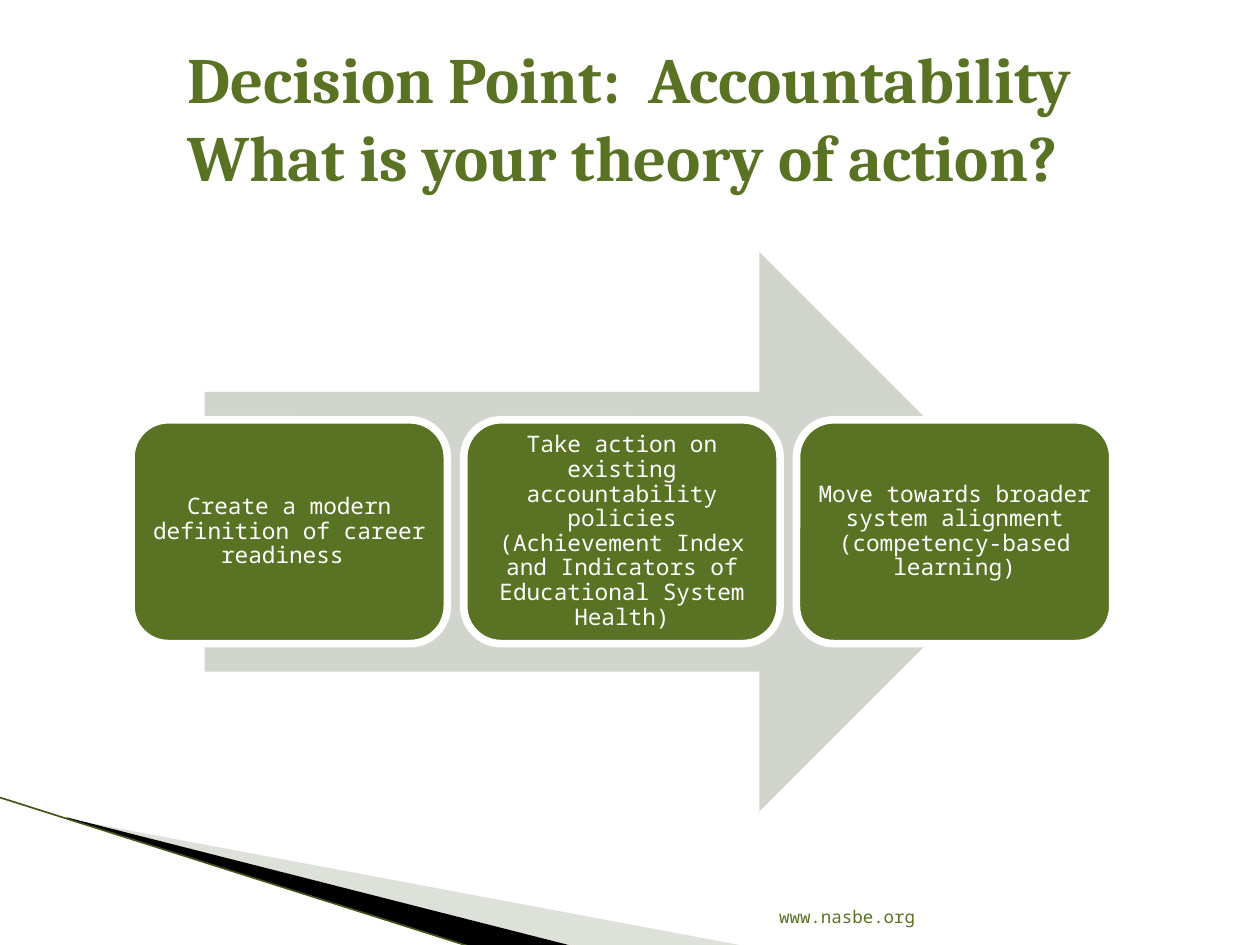
from lxml import etree
from pptx import Presentation
from pptx.dml.color import RGBColor
from pptx.enum import shapes, text
from pptx.oxml.ns import qn
from pptx.util import Pt

GREEN, WHITE = "597224", "FFFFFF"
MONO = "Noto Sans Mono"
STEPS = [
    "Create a modern definition of career readiness ",
    "Take action on existing accountability policies (Achievement Index "
    "and Indicators of Educational System Health)",
    "Move towards broader system alignment (competency-based learning)",
]


def color(hex_code):
    return RGBColor.from_string(hex_code)


def paint(shape, fill):
    """Give a shape a plain fill, no outline and no shadow."""
    shape.shadow.inherit = False
    shape.fill.solid()
    shape.fill.fore_color.rgb = color(fill)
    shape.line.fill.background()


def write(shape, wording, size, font, hex_code, align, anchor, bold=False):
    frame = shape.text_frame
    frame.word_wrap = True
    frame.vertical_anchor = anchor
    paragraph = frame.paragraphs[0]
    paragraph.text = wording
    paragraph.alignment = align
    paragraph.font.size = Pt(size)
    paragraph.font.name = font
    paragraph.font.bold = bold
    paragraph.font.color.rgb = color(hex_code)
    return frame


def add_wedge(slide, points, fill, opacity=100):
    builder = slide.shapes.build_freeform(*points[0], scale=Pt(1))
    builder.add_line_segments(points[1:], close=True)
    wedge = builder.convert_to_shape()
    paint(wedge, fill)
    if opacity < 100:
        tint = wedge.fill._xPr.find(qn("a:solidFill"))[0]
        etree.SubElement(tint, qn("a:alpha")).set("val", str(opacity * 1000))


def add_corner(slide, left, top, width, height):
    """Draw the sweeping wedges and edge line in the lower left corner."""
    bottom = top + height
    tip = (left + 39, top + 12.5)
    add_wedge(slide, [tip, (left + width, bottom), (left + 329, bottom), tip],
              "ADB6A2", 40)
    add_wedge(slide, [(left + 38, top + 11.5), (left + 329, bottom),
                      (left + 268, bottom), tip], "000000")
    edge = slide.shapes.add_connector(
        shapes.MSO_CONNECTOR.STRAIGHT,
        Pt(left), Pt(top), Pt(left + 268), Pt(bottom))
    edge.line.color.rgb = color("435619")
    edge.line.width = Pt(0.95)
    etree.SubElement(edge._element.spPr, qn("a:effectLst"))


def add_title(slide, left, top, width, height):
    title = slide.shapes.add_textbox(Pt(left), Pt(top), Pt(width), Pt(height))
    write(title,
          "Decision Point:  Accountability\vWhat is your theory of action? ",
          36.9, "Cambria", GREEN, text.PP_ALIGN.CENTER,
          text.MSO_ANCHOR.MIDDLE, bold=True)


def add_footer(slide, left, top, width, height):
    footer = slide.shapes.add_textbox(Pt(left), Pt(top), Pt(width), Pt(height))
    write(footer, "www.nasbe.org", 10, MONO, GREEN,
          text.PP_ALIGN.RIGHT, text.MSO_ANCHOR.BOTTOM)


def add_process(slide, left, top, width, height):
    """Place the steps in a row across a wide arrow."""
    arrow_width = 0.85 * width
    arrow = slide.shapes.add_shape(
        shapes.MSO_SHAPE.RIGHT_ARROW, Pt(left + (width - arrow_width) / 2),
        Pt(top), Pt(arrow_width), Pt(height))
    paint(arrow, "D1D5CD")

    gap, step_height = 9.4, 0.4 * height
    step_width = (width - gap * (len(STEPS) - 1)) / len(STEPS)
    for i, wording in enumerate(STEPS):
        step = slide.shapes.add_shape(
            shapes.MSO_SHAPE.ROUNDED_RECTANGLE,
            Pt(left + i * (step_width + gap)),
            Pt(top + (height - step_height) / 2),
            Pt(step_width), Pt(step_height))
        paint(step, GREEN)
        step.line.color.rgb = color(WHITE)
        step.line.width = Pt(4.33)
        frame = write(step, wording, 13, MONO, WHITE,
                      text.PP_ALIGN.CENTER, text.MSO_ANCHOR.MIDDLE)
        frame.margin_left = frame.margin_right = Pt(3.6)
        frame.margin_top = frame.margin_bottom = Pt(3.6)
        frame.paragraphs[0].line_spacing = 0.9


def main():
    deck = Presentation()
    deck.slide_width, deck.slide_height = Pt(720), Pt(540)
    slide = deck.slides.add_slide(deck.slide_layouts[6])
    add_corner(slide, 0, 455.75, 428, 85)
    add_title(slide, 36, 21.6, 648, 90)
    add_footer(slide, 345, 504.7, 185, 28.8)
    add_process(slide, 74.9, 144, 561, 319.7)
    deck.save("out.pptx")


if __name__ == "__main__":
    main()
